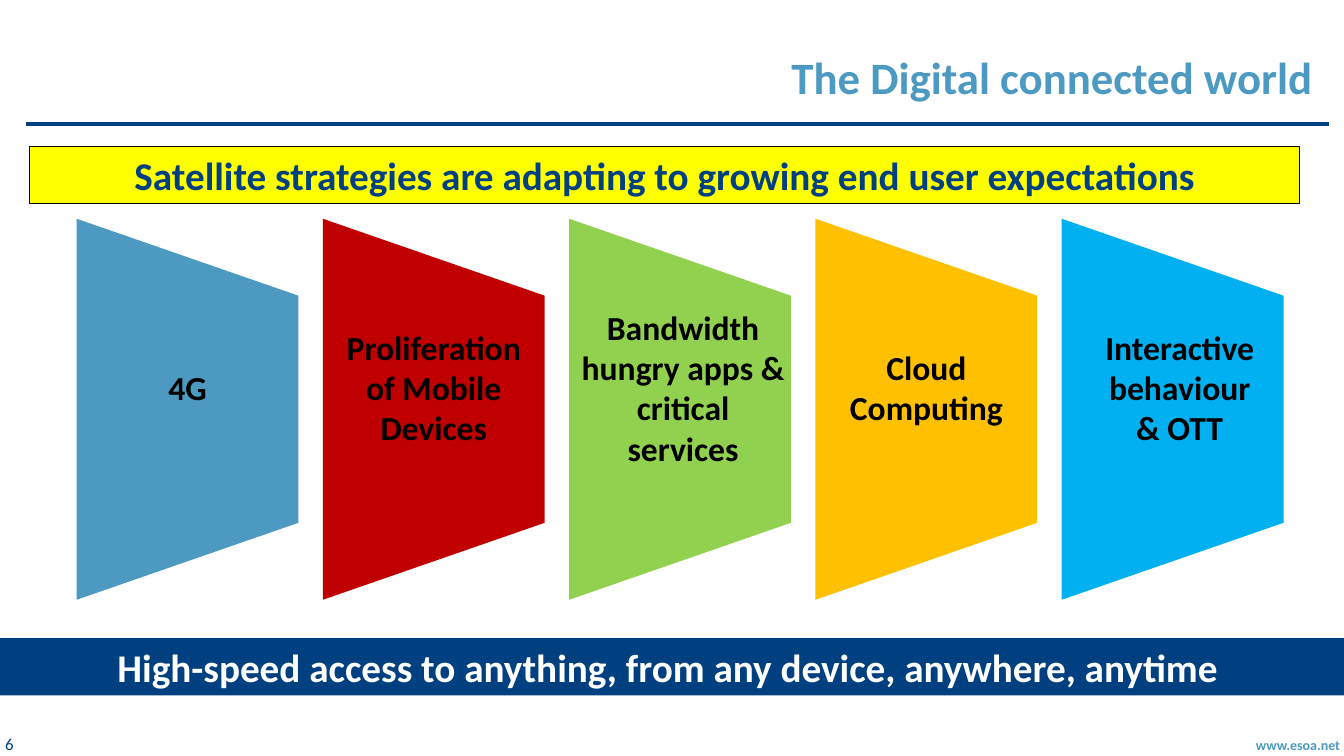
from dataclasses import dataclass

from lxml import etree
from pptx import Presentation
from pptx.dml.color import RGBColor
from pptx.enum import shapes, text
from pptx.oxml import ns
from pptx.util import Inches, Pt


@dataclass(frozen=True)
class Theme:
    font: str = "Calibri"
    navy: str = "004080"
    sky: str = "4C9AC2"
    yellow: str = "FFFF00"
    black: str = "000000"
    white: str = "FFFFFF"
    title_size: int = 32
    banner_size: int = 28
    label_size: int = 24
    page_size: int = 12
    site_size: int = 10


THEME = Theme()
LEFT, CENTER, RIGHT = text.PP_ALIGN.LEFT, text.PP_ALIGN.CENTER, text.PP_ALIGN.RIGHT
TOP, MIDDLE = text.MSO_ANCHOR.TOP, text.MSO_ANCHOR.MIDDLE

# Trends: label, fill, lines of text, label width, label shift from the panel centre
TRENDS = [
    ("4G", THEME.sky, 1, 1.89, 0),
    ("Proliferation of Mobile Devices", "C00000", 3, 2.2, 0),
    ("Bandwidth hungry apps & critical services", "92D050", 4, 2.28, 0.03),
    ("Cloud Computing", "FFC000", 2, 2.52, 0),
    ("Interactive behaviour & OTT", "00B0F0", 3, 1.89, 0.07),
]


def rgb(color):
    return RGBColor.from_string(color)


def inches(box):
    return [Inches(length) for length in box]


def write(shape, words, size, color, align=CENTER, bold=True, anchor=TOP,
          wrap=True, insets=(0.1, 0.05)):
    frame = shape.text_frame
    frame.text = words
    frame.word_wrap = wrap
    frame.auto_size = text.MSO_AUTO_SIZE.NONE
    frame.vertical_anchor = anchor
    frame.margin_left = frame.margin_right = Inches(insets[0])
    frame.margin_top = frame.margin_bottom = Inches(insets[1])
    paragraph = frame.paragraphs[0]
    paragraph.alignment = align
    font = paragraph.font
    font.name, font.size, font.bold = THEME.font, Pt(size), bold
    font.color.rgb = rgb(color)
    return paragraph


def add_panel(slide, kind, box, fill, outline=None):
    panel = slide.shapes.add_shape(kind, *inches(box))
    panel.shadow.inherit = False
    panel.fill.solid()
    panel.fill.fore_color.rgb = rgb(fill)
    if outline:
        panel.line.color.rgb = rgb(outline)
        panel.line.width = Pt(0.75)
    else:
        panel.line.fill.background()
    return panel


def add_header(slide, box):
    left, top, width, height = box
    title = slide.shapes.title
    title.left, title.top, title.width, title.height = inches(
        (left + 5.09, top, 7.77, 0.64))
    write(title, "The Digital connected world", THEME.title_size, THEME.sky, RIGHT)

    # Rule along the bottom of the header
    rule = slide.shapes.add_connector(
        shapes.MSO_CONNECTOR.STRAIGHT,
        *inches((left, top + height, left + width, top + height)))
    rule.line.color.rgb = rgb(THEME.navy)
    rule.line.width = Pt(2.25)
    etree.SubElement(rule._element.spPr, ns.qn("a:effectLst"))


def add_banner(slide, box, words, fill, color, outline=None):
    banner = add_panel(slide, shapes.MSO_SHAPE.RECTANGLE, box, fill, outline)
    write(banner, words, THEME.banner_size, color)


def add_trends(slide, box):
    left, top, width, height = box
    panel_width = 2.2
    step = (width - panel_width) / (len(TRENDS) - 1)
    for index, (label, fill, lines, label_width, shift) in enumerate(TRENDS):
        center = left + panel_width / 2 + index * step
        middle = top + height / 2

        # Turned a quarter, so the panel's width and height change places
        panel = add_panel(
            slide, shapes.MSO_SHAPE.TRAPEZOID,
            (center - height / 2, middle - panel_width / 2, height, panel_width), fill)
        panel.rotation = 90
        panel.adjustments[0] = 0.347

        # Label sits a little above the panel's middle
        label_height = 0.1 + 0.405 * lines
        caption = slide.shapes.add_textbox(*inches(
            (center + shift - label_width / 2, middle - 0.22 - label_height / 2,
             label_width, label_height)))
        write(caption, label, THEME.label_size, THEME.black, anchor=MIDDLE)


def add_footer(slide, box):
    left, top, width, height = box
    site = slide.shapes.add_textbox(*inches((left + width - 2.73, top, 2.73, height)))
    write(site, "www.esoa.net", THEME.site_size, THEME.sky, RIGHT)

    page = slide.shapes.add_textbox(*inches((left, top + 0.04, 0.2, 0.19)))
    number = write(page, "6", THEME.page_size, THEME.navy, LEFT, bold=False,
                   wrap=False, insets=(0, 0))
    number.line_spacing = 0.93


def main():
    deck = Presentation()
    deck.slide_width, deck.slide_height = Inches(13.33), Inches(7.5)
    slide = deck.slides.add_slide(deck.slide_layouts[5])

    add_header(slide, (0.26, 0.44, 12.92, 0.79))
    add_trends(slide, (0.76, 2.17, 11.97, 3.78))
    add_banner(slide, (0.29, 1.45, 12.6, 0.57),
               "Satellite strategies are adapting to growing end user expectations",
               THEME.yellow, THEME.navy, THEME.black)
    add_banner(slide, (0, 6.33, 13.33, 0.57),
               "High-speed access to anything, from any device, anywhere, anytime ",
               THEME.navy, THEME.white)
    add_footer(slide, (0.05, 7.26, 13.34, 0.27))
    deck.save("out.pptx")


if __name__ == "__main__":
    main()
